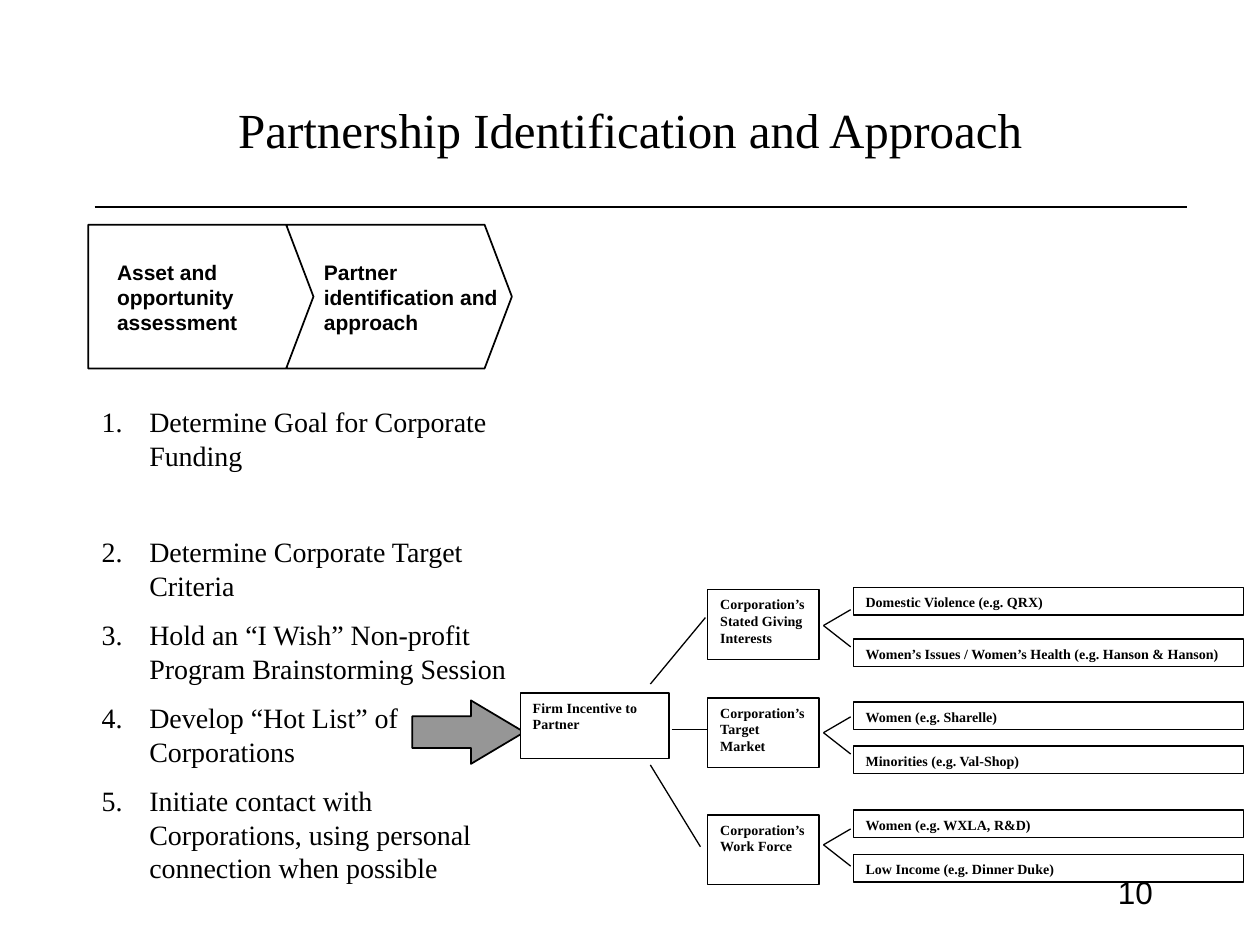
from lxml import etree
from pptx import Presentation, util as u
from pptx.dml.color import RGBColor
from pptx.enum import shapes, text
from pptx.oxml.ns import qn

Cm, Pt = u.Cm, u.Pt
KIND, ALIGN, ANCHOR = shapes.MSO_SHAPE, text.PP_ALIGN, text.MSO_ANCHOR
BLACK, WHITE, GREY = "000000", "FFFFFF", "969696"
SERIF, SANS = "Times New Roman", "Arial"


def color(code):
    return RGBColor.from_string(code)


class Page:
    """Style and current slide; all lengths are in centimetres."""

    def __init__(self, deck):
        self.slide = deck.slides.add_slide(deck.slide_layouts[6])
        self.items = self.slide.shapes

    def fill_in(self, frame, lines, size, font=SERIF, bold=False,
                align=ALIGN.LEFT, anchor=ANCHOR.TOP):
        frame.word_wrap = True
        frame.vertical_anchor = anchor
        for i, line in enumerate(lines):
            par = frame.add_paragraph() if i else frame.paragraphs[0]
            par.text = line
            par.alignment = align
            par.font.size, par.font.name, par.font.bold = Pt(size), font, bold
            par.font.color.rgb = color(BLACK)
        return frame

    def label(self, x, y, w, h, lines, size, pad=True, **style):
        box = self.items.add_textbox(Cm(x), Cm(y), Cm(w), Cm(h))
        frame = box.text_frame
        if not pad:
            frame.margin_left = frame.margin_right = 0
            frame.margin_top = frame.margin_bottom = 0
        return self.fill_in(frame, lines, size, **style)

    def shape(self, kind, x, y, w, h, fill=WHITE, width=1, adjust=()):
        item = self.items.add_shape(kind, Cm(x), Cm(y), Cm(w), Cm(h))
        item.shadow.inherit = False
        item.fill.solid()
        item.fill.fore_color.rgb = color(fill)
        item.line.color.rgb = color(BLACK)
        item.line.width = Pt(width)
        for i, value in enumerate(adjust):
            item.adjustments[i] = value
        return item

    def box(self, x, y, w, h, words):
        item = self.shape(KIND.RECTANGLE, x, y, w, h, width=0.75)
        self.fill_in(item.text_frame, [words], 8, bold=True)

    def line(self, x1, y1, x2, y2, width=0.75):
        item = self.items.add_connector(
            shapes.MSO_CONNECTOR.STRAIGHT, Cm(x1), Cm(y1), Cm(x2), Cm(y2))
        item.line.color.rgb = color(BLACK)
        item.line.width = Pt(width)
        etree.SubElement(item._element.spPr, qn("a:effectLst"))

    def steps(self, x, y, w, h, lines, gaps):
        frame = self.label(x, y, w, h, lines, 16)
        for par, gap in zip(frame.paragraphs, gaps):
            par.space_before = Pt(gap)
            props = par._p.get_or_add_pPr()
            props.set("marL", str(Cm(0.96)))
            props.set("indent", str(-Cm(0.96)))
            etree.SubElement(props, qn("a:buFont")).set("typeface", "+mj-lt")
            etree.SubElement(props, qn("a:buAutoNum")).set("type", "arabicPeriod")
            # Bullet marks must come before the run defaults
            props.append(props.find(qn("a:defRPr")))


def main():
    deck = Presentation()
    deck.slide_width, deck.slide_height = Cm(25.4), Cm(19.05)
    page = Page(deck)

    # Page number, title and rules
    page.label(18.21, 17.35, 5.28, 1.27, ["10"], 18, font=SANS,
               align=ALIGN.RIGHT, anchor=ANCHOR.MIDDLE)
    page.label(1.63, 0.2, 22.15, 4.78, ["Partnership Identification and Approach"],
               28, align=ALIGN.CENTER, anchor=ANCHOR.MIDDLE)
    for left, right in ((4.62, 23.09), (1.91, 23.93)):
        page.line(left, 4.17, right, 4.17, 1)

    # Stage chevrons, the first on top of the second
    for x in (5.78, 1.78):
        page.shape(KIND.PENTAGON, x, 4.53, 4.54, 2.9, adjust=[0.19])
    for x, w, words in ((2.36, 3.1, "Asset and opportunity assessment"),
                        (6.53, 3.53, "Partner identification and approach")):
        page.label(x, 5.21, w, 1.55, [words], 12, pad=False, font=SANS,
                   bold=True, anchor=ANCHOR.MIDDLE)

    # Numbered steps, with a wide gap after the first
    page.steps(1.8, 8.03, 8.89, 14.1, [
        "Determine Goal for Corporate Funding",
        "Determine Corporate Target Criteria",
        "Hold an “I Wish” Non-profit Program Brainstorming Session",
        "Develop “Hot List” of Corporations",
        "Initiate contact with Corporations, using personal connection when possible",
    ], [8, 36, 9, 9, 9])

    # Arrow and root of the tree
    page.shape(KIND.RIGHT_ARROW, 8.31, 14.12, 2.26, 1.28, GREY, adjust=[0.5, 0.84])
    page.box(10.49, 13.97, 3, 1.32, "Firm Incentive to Partner")
    for ends in ((13.11, 13.79, 14.22, 12.45), (13.54, 14.71, 14.25, 14.71),
                 (13.11, 15.42, 14.12, 17.07)):
        page.line(*ends)

    # Branches: top, name, fork height, leaves
    tree = [
        (11.89, "Corporation’s Stated Giving Interests", 12.61,
         [(11.84, "Domestic Violence (e.g. QRX)"),
          (12.88, "Women’s Issues / Women’s Health (e.g. Hanson & Hanson)")]),
        (14.07, "Corporation’s Target Market", 14.77,
         [(14.15, "Women (e.g. Sharelle)"),
          (15.04, "Minorities (e.g. Val-Shop)")]),
        (16.43, "Corporation’s Work Force", 17.03,
         [(16.33, "Women (e.g. WXLA, R&D)"),
          (17.22, "Low Income (e.g. Dinner Duke)")]),
    ]
    for top, name, fork, leaves in tree:
        page.box(14.27, top, 2.24, 1.4, name)
        for (y, words), rise in zip(leaves, (-0.32, 0.43)):
            page.box(17.2, y, 7.87, 0.56, words)
            page.line(16.6, fork, 17.15, fork + rise)

    deck.save("out.pptx")


if __name__ == "__main__":
    main()
